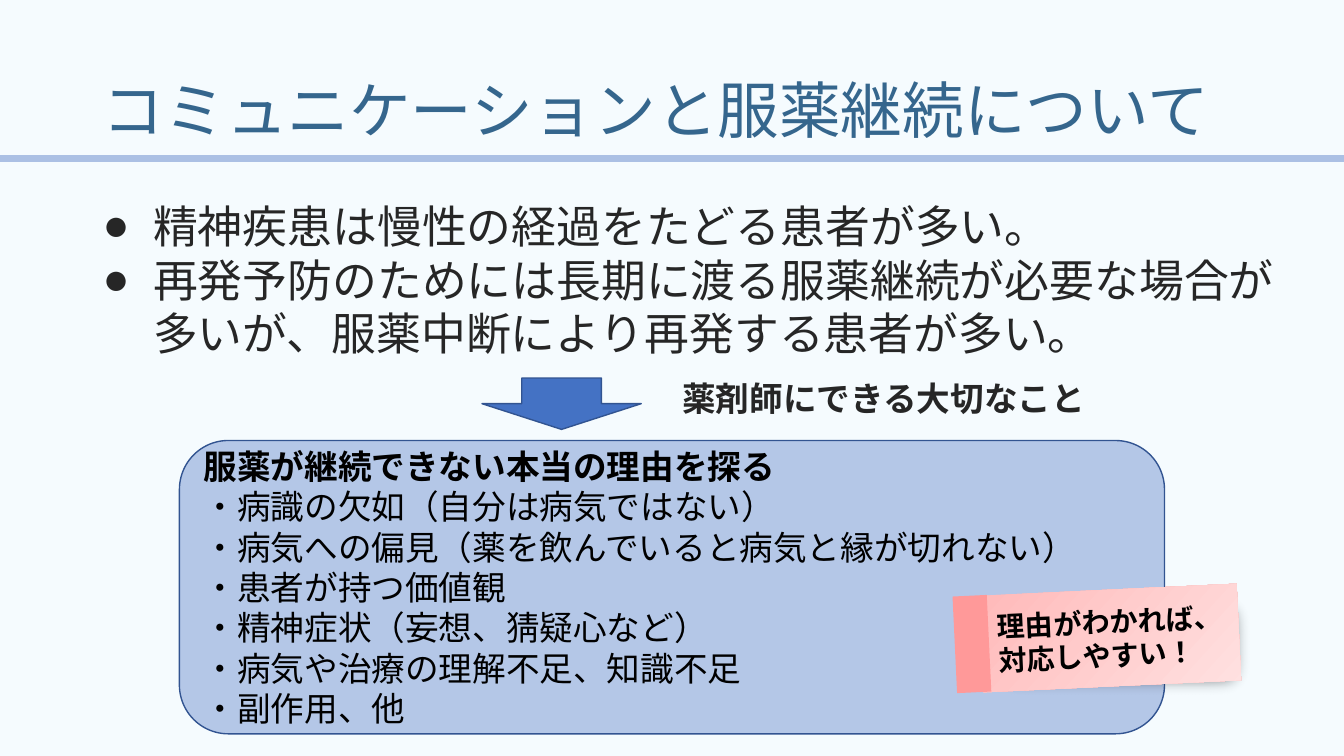
import pptx
import pptx.util
import pptx.dml.color
import pptx.enum.lang
import pptx.enum.shapes
import pptx.enum.text
import pptx.oxml
import pptx.oxml.ns

Inches = pptx.util.Inches
Pt = pptx.util.Pt
KIND = pptx.enum.shapes.MSO_SHAPE
SIDE = pptx.enum.text.PP_ALIGN
MIDDLE = pptx.enum.text.MSO_ANCHOR.MIDDLE
JAPANESE = pptx.enum.lang.MSO_LANGUAGE_ID.JAPANESE
NOTO = "Noto Sans CJK JP"
TILT = 357.3


def shade(code):
    return pptx.dml.color.RGBColor.from_string(code)


def apply(item, values):
    for name, value in values.items():
        setattr(item, name, value)


def child(parent, tag, **values):
    node = pptx.oxml.parse_xml(f"<{tag} {pptx.oxml.ns.nsdecls('a')}/>")
    for name, value in values.items():
        node.set(name, str(value))
    parent.append(node)
    return node


def write(frame, lines, size, color, face="Arial", bold=0, bullet=None, **style):
    frame.word_wrap = True
    for spot, line in enumerate(lines):
        para = frame.paragraphs[0] if spot == 0 else frame.add_paragraph()
        apply(para, {"alignment": SIDE.LEFT, **style})
        if bullet:
            props = para._p.get_or_add_pPr()
            props.set("marL", str(Inches(0.5)))
            props.set("indent", str(Inches(-0.5)))
            child(props, "a:buFont", typeface="Arial")
            child(props, "a:buChar", char=bullet)
        run = para.add_run()
        run.text = line
        apply(run.font, {"name": face, "size": Pt(size), "bold": spot < bold,
                         "language_id": JAPANESE})
        run.font.color.rgb = shade(color)
        child(run.font._element, "a:ea", typeface=face)


def block(slide, kind, box, fill=None, edge=None):
    shape = slide.shapes.add_shape(kind, *map(Inches, box))
    shape.shadow.inherit = False
    if fill:
        shape.fill.solid()
        shape.fill.fore_color.rgb = shade(fill)
    if edge:
        shape.line.color.rgb = shade(edge)
        shape.line.width = Pt(1)
    else:
        shape.line.fill.background()
    return shape


def label(slide, box, lines, size, **style):
    frame = slide.shapes.add_textbox(*map(Inches, box)).text_frame
    write(frame, lines, size, "262626", **style)


def header(slide, box, text):
    left, top, width, height = box
    title = slide.shapes.title
    apply(title, dict(zip(("left", "top", "width", "height"), map(Inches, box))))
    title.text_frame.vertical_anchor = MIDDLE
    write(title.text_frame, [text], 44, "35668D", NOTO, line_spacing=0.9)
    level = Inches(top + 1.17)
    rule = slide.shapes.add_connector(
        pptx.enum.shapes.MSO_CONNECTOR.STRAIGHT, 0, level, Inches(13.33), level)
    rule.line.color.rgb = shade("ABC0E4")
    rule.line.width = Pt(5.25)
    child(rule._element.spPr, "a:effectLst")


def panel(slide, box, lines):
    shape = block(slide, KIND.ROUNDED_RECTANGLE, box, "B4C7E7", "325491")
    shape.text_frame.vertical_anchor = MIDDLE
    write(shape.text_frame, lines, 24, "000000", bold=1)


def sticker(slide, box, lines):
    left, top, width, height = box
    cast = block(slide, KIND.RECTANGLE,
                 (left - 0.02, top - 0.05, width + 0.22, height + 0.23), "000000")
    props = cast._element.spPr
    tint = props.find(pptx.oxml.ns.qn("a:solidFill"))[0]
    child(tint, "a:alpha", val=46000)
    effect = props.find(pptx.oxml.ns.qn("a:effectLst"))
    child(effect, "a:softEdge", rad=Inches(0.18))

    note = block(slide, KIND.RECTANGLE, box)
    note.rotation = TILT
    note.fill.gradient()
    note.fill.gradient_angle = 315
    for stop, color in zip(note.fill.gradient_stops, ("FFB9B9", "FFE1E1")):
        stop.color.rgb = shade(color)
    apply(note.text_frame, {"vertical_anchor": MIDDLE, "margin_left": Inches(0.17)})
    write(note.text_frame, lines, 20, "000000", NOTO, len(lines), line_spacing=Pt(24))

    strip = block(slide, KIND.RECTANGLE,
                  (left - 0.26, top + 0.06, 0.34, height), "FF9999")
    strip.rotation = TILT


def main():
    deck = pptx.Presentation()
    apply(deck, {"slide_width": Inches(13.33), "slide_height": Inches(7.5)})
    slide = deck.slides.add_slide(deck.slide_layouts[5])
    slide.background.fill.solid()
    slide.background.fill.fore_color.rgb = shade("F5FBFE")

    header(slide, (0.92, 0.4, 11.5, 1.45), "コミュニケーションと服薬継続について")
    label(slide, (0.92, 1.92, 11.86, 1.72), [
        "精神疾患は慢性の経過をたどる患者が多い。",
        "再発予防のためには長期に渡る服薬継続が必要な場合が多いが、服薬中断により再発する患者が多い。",
    ], 32, bullet="●")
    block(slide, KIND.DOWN_ARROW, (4.78, 3.75, 1.58, 0.51), "4472C4", "325491")
    label(slide, (6.67, 3.7, 5.94, 0.5), ["薬剤師にできる大切なこと"], 24, bold=1)
    panel(slide, (1.78, 4.37, 9.77, 2.91), [
        "服薬が継続できない本当の理由を探る",
        "・病識の欠如（自分は病気ではない）",
        "・病気への偏見（薬を飲んでいると病気と縁が切れない）",
        "・患者が持つ価値観",
        "・精神症状（妄想、猜疑心など）",
        "・病気や治療の理解不足、知識不足",
        "・副作用、他",
    ])
    sticker(slide, (9.73, 5.85, 2.56, 0.96), ["理由がわかれば、", "対応しやすい！"])
    deck.save("out.pptx")


if __name__ == "__main__":
    main()
